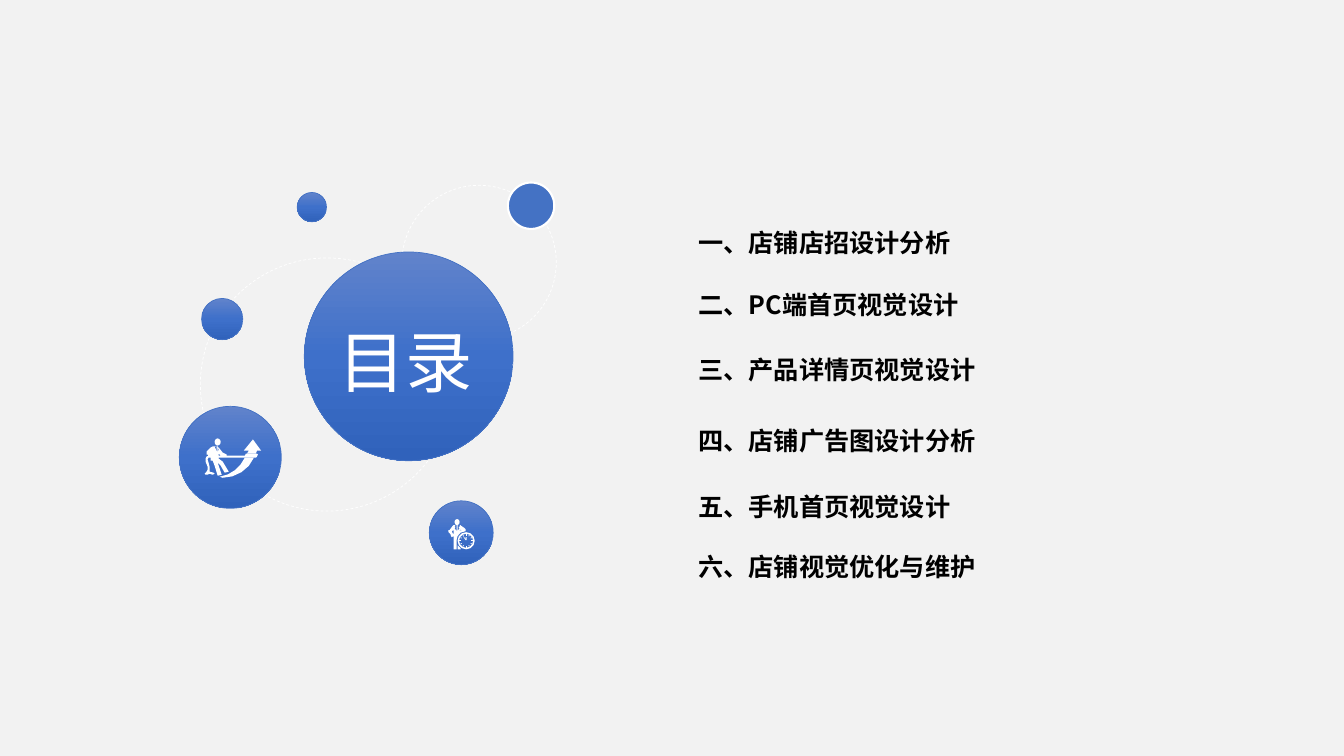
"""Build a contents slide with linked circles and six chapter headings."""
from dataclasses import dataclass
from math import cos, pi, sin

from lxml import etree
from pptx import Presentation
from pptx import util as u
from pptx.dml.color import RGBColor
from pptx.enum import dml, shapes, text
from pptx.oxml.ns import qn


@dataclass(frozen=True)
class Theme:
    """Colours, fonts and type sizes of the slide."""
    back: str = "F2F2F2"
    white: str = "FFFFFF"
    ink: str = "000000"
    accent: str = "4472C4"
    shades: tuple = ("6183CB", "3E70CA", "3062BB")
    font: str = "Noto Sans CJK SC"
    title_size: int = 48
    item_size: int = 18


THEME = Theme()
ICON_UNIT = 0.0254

ORBITS = [(10.13, 4.67, 3.89), (5.05, 6.5, 6.38)]
BUBBLES = [(7.67, 6.35, 5.26), (10.82, 12.62, 1.61), (5.08, 7.52, 1.04),
           (7.49, 4.85, 0.74), (4.52, 10.24, 2.57)]
SOLID_BUBBLE = (12.8, 4.6, 1.17)
ITEMS = [("一、店铺店招设计分析", 5.59), ("二、PC端首页视觉设计", 7.16),
         ("三、产品详情页视觉设计", 8.81), ("四、店铺广告图设计分析", 10.59),
         ("五、手机首页视觉设计", 12.24), ("六、店铺视觉优化与维护", 13.77)]

CLOCK_MAN = [
    [(462, 527), (462, 525), (461, 524), (458, 522), (457, 521), (456, 521),
     (457, 522), (455, 523), (456, 524), (454, 527), (454, 521), (453, 521),
     (453, 527), (451, 524), (452, 523), (451, 522), (452, 521), (450, 521),
     (449, 522), (446, 526), (445, 526), (445, 528), (446, 529), (447, 530),
     (448, 533), (450, 532), (450, 545), (453, 545), (453, 536), (454, 532),
     (457, 528.5)],
    [(457, 526), (457, 525), (458, 526), (456, 527), (455, 527)],
    [(450, 530), (449, 529), (449, 528), (448, 527), (450, 526)]]
CLOCK_LEG = [[(454, 541), (454, 545), (457, 545), (457, 544), (455.5, 542.5)]]
CLOCK_HANDS = [[(463, 536), (463, 533), (462, 533), (462, 535), (460, 532),
                (460, 533), (462, 536)]]
SWOOSH = [[(243, 454), (238.7, 460.9), (233.1, 466.5), (226.3, 470.6),
           (218, 473), (221, 474), (230.6, 472.6), (239.5, 468.5),
           (246.9, 462.2), (252, 454)]]
ARROW = [[(245, 450), (254, 450), (255, 447), (259, 447), (251, 436),
          (242, 447), (247, 447)]]
ROPE_MAN = [
    [(255, 450), (244, 450), (243, 452), (225, 452), (225, 451), (221, 449),
     (217, 444), (216, 444), (217, 446), (216, 449), (216, 442), (215, 442),
     (215, 449), (214, 445), (213, 444), (214, 443), (211, 443), (209, 444),
     (207, 446), (205, 448), (205, 451), (206, 451), (207, 452), (205, 453),
     (204, 455), (204, 458), (206, 463), (206, 466), (205, 468), (203, 470),
     (204, 471), (206, 471), (208, 470), (211, 471), (213, 470), (212, 469),
     (208, 468), (208, 463), (207, 459), (206, 456), (207, 454), (209, 454),
     (209, 457), (211, 457), (213, 462), (216, 472), (220, 471), (216, 459),
     (219, 462), (223, 469), (227, 468), (221, 458), (217, 455), (217, 454),
     (254, 454), (255, 453), (256, 451)],
    [(217, 452), (217, 450), (218, 451), (219, 452)]]


def apply(target, values):
    """Set each named attribute of the target."""
    for name, value in values.items():
        setattr(target, name, value)


def paint(shape, fill=None, line=None, width=0.5, dash=None):
    """Give a shape a flat or graded fill and an outline."""
    shape.shadow.inherit = False
    if fill is None:
        shape.fill.background()
    elif isinstance(fill, tuple):
        grade(shape, fill)
    else:
        shape.fill.solid()
        shape.fill.fore_color.rgb = RGBColor.from_string(fill)
    if line is None:
        shape.line.fill.background()
    else:
        shape.line.color.rgb = RGBColor.from_string(line)
        apply(shape.line, {"width": u.Pt(width), "dash_style": dash})


def grade(shape, colours):
    """Fill a shape from top to bottom with evenly spaced colours."""
    shape.fill.gradient()
    shape.fill.gradient_angle = 270
    stops = next(shape.element.iter(qn("a:gsLst")))
    stops.clear()
    for index, colour in enumerate(colours):
        position = 100000 * index // (len(colours) - 1)
        stop = etree.SubElement(stops, qn("a:gs"), pos=str(position))
        etree.SubElement(stop, qn("a:srgbClr"), val=colour)


def add_circle(page, left, top, size, **look):
    """Draw one circle."""
    circle = page.shapes.add_shape(
        shapes.MSO_SHAPE.OVAL, u.Cm(left), u.Cm(top), u.Cm(size), u.Cm(size))
    paint(circle, **look)


def add_icon_preset(icon, kind, *bounds):
    """Draw a white preset shape in icon units."""
    part = icon.shapes.add_shape(kind, *(u.Cm(b * ICON_UNIT) for b in bounds))
    paint(part, THEME.white)
    return part


def add_icon_outline(icon, contours):
    """Draw a white outline, with holes, in icon units."""
    rings = [[(u.Cm(x * ICON_UNIT), u.Cm(y * ICON_UNIT)) for x, y in ring]
             for ring in contours]
    builder = icon.shapes.build_freeform(*rings[0][0])
    builder.add_line_segments(rings[0][1:])
    for ring in rings[1:]:
        builder.move_to(*ring[0])
        builder.add_line_segments(ring[1:])
    paint(builder.convert_to_shape(), THEME.white)


def hour_mark(hour):
    """Return the outline of one mark on the clock face."""
    angle = hour * pi / 6
    inner, outer = (5, 7.5) if hour % 3 == 0 else (5.2, 6.4)
    corners = [(inner, -0.4), (outer, -0.4), (outer, 0.4), (inner, 0.4)]
    return [(462.5 + r * cos(angle) - s * sin(angle),
             536.5 + r * sin(angle) + s * cos(angle)) for r, s in corners]


def add_clock_icon(page):
    """Draw a man leaning on a clock."""
    icon = page.shapes.add_group_shape()
    add_icon_preset(icon, shapes.MSO_SHAPE.OVAL, 451, 515, 5, 6)
    face = add_icon_preset(icon, shapes.MSO_SHAPE.DONUT, 454, 528, 17, 17)
    face.adjustments[0] = 0.09
    marks = [[hour_mark(hour)] for hour in range(12)]
    for contours in [CLOCK_MAN, CLOCK_LEG, CLOCK_HANDS, *marks]:
        add_icon_outline(icon, contours)


def add_rope_icon(page):
    """Draw a man pulling an arrow upwards."""
    icon = page.shapes.add_group_shape()
    add_icon_preset(icon, shapes.MSO_SHAPE.OVAL, 213, 435, 6, 7)
    for contours in (SWOOSH, ARROW, ROPE_MAN):
        add_icon_outline(icon, contours)


def write(box, bounds, words, size, colour, bold, align):
    """Place a text box and write one formatted line in it."""
    apply(box, dict(zip(("left", "top", "width", "height"), map(u.Cm, bounds))))
    frame = box.text_frame
    apply(frame, {"word_wrap": True, "auto_size": text.MSO_AUTO_SIZE.NONE,
                  "vertical_anchor": text.MSO_ANCHOR.MIDDLE})
    para = frame.paragraphs[0]
    para.alignment = align
    span = para.add_run()
    span.text = words
    apply(span.font, {"name": THEME.font, "size": u.Pt(size), "bold": bold})
    span.font.color.rgb = RGBColor.from_string(colour)
    etree.SubElement(span.font._element, qn("a:ea"), typeface=THEME.font)


def main():
    """Build and save the deck."""
    deck = Presentation()
    apply(deck, {"slide_width": u.Cm(33.87), "slide_height": u.Cm(19.05)})
    page = deck.slides.add_slide(deck.slide_layouts.get_by_name("Title Only"))
    page.background.fill.solid()
    page.background.fill.fore_color.rgb = RGBColor.from_string(THEME.back)
    for orbit in ORBITS:
        add_circle(page, *orbit, line=THEME.white, dash=dml.MSO_LINE.DASH)
    for bubble in BUBBLES:
        add_circle(page, *bubble, fill=THEME.shades, line=THEME.accent)
    add_circle(page, *SOLID_BUBBLE, fill=THEME.accent, line=THEME.white, width=1.5)
    title = page.shapes.title
    title.element.getparent().append(title.element)
    write(title, (8.03, 7.92, 4.37, 2.31), "目录", THEME.title_size,
          THEME.white, False, text.PP_ALIGN.CENTER)
    add_clock_icon(page)
    add_rope_icon(page)
    for words, top in ITEMS:
        box = page.shapes.add_textbox(0, 0, 0, 0)
        write(box, (17.35, top, 8.1, 1.02), words, THEME.item_size,
              THEME.ink, True, text.PP_ALIGN.LEFT)
    deck.save("out.pptx")


if __name__ == "__main__":
    main()
